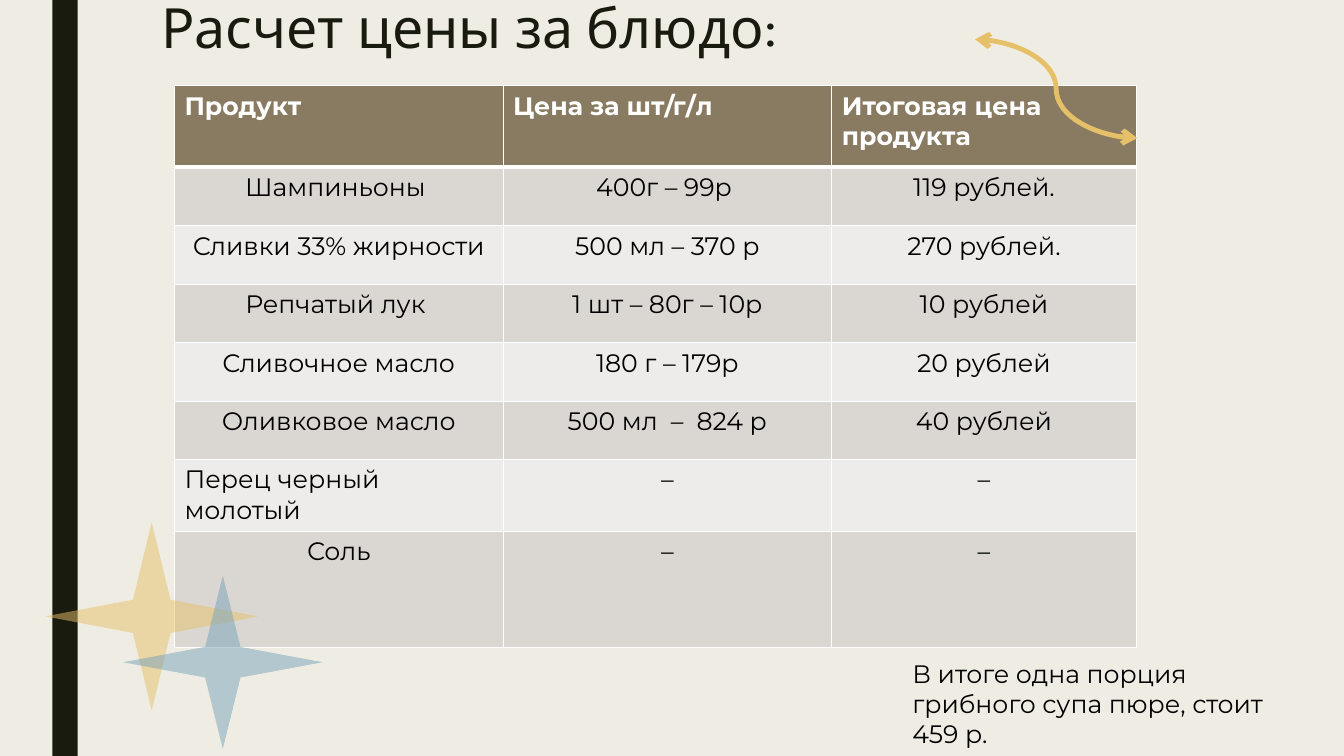
from dataclasses import dataclass

import lxml.etree
import pptx
import pptx.dml.color
import pptx.enum.shapes
import pptx.enum.text
import pptx.oxml
import pptx.oxml.ns
import pptx.util

SCALE = 9144
HUES = {
    "back": "EFEDE3", "dark": "191B0E", "head": "897B61", "odd": "DAD7D2",
    "even": "EDECEA", "gold": "E6C069", "blue": "77A2BB",
    "white": "FFFFFF", "black": "000000",
}
FORM = pptx.enum.shapes.MSO_SHAPE
ALIGN = pptx.enum.text.PP_ALIGN
qn = pptx.oxml.ns.qn


@dataclass(frozen=True)
class Box:
    left: int
    top: int
    width: int
    height: int


@dataclass(frozen=True)
class Figure:
    form: FORM
    box: Box
    hue: str
    alpha: int = 100


FIGURES = [
    Figure(FORM.STAR_4_POINT, Box(45, 518, 211, 187), "gold", 50),
    Figure(FORM.STAR_4_POINT, Box(122, 571, 198, 172), "blue", 50),
]
BAR = Figure(FORM.RECTANGLE, Box(52, 0, 25, 750), "dark")
COLS = [326, 326, 302]
ROWS = [81, 58, 58, 58, 58, 58, 58, 115]
PRICES = [
    ("Продукт", "Цена за шт/г/л", "Итоговая цена продукта"),
    ("Шампиньоны ", "400г – 99р ", "119 рублей."),
    ("Сливки 33% жирности", "500 мл – 370 р", "270 рублей."),
    ("Репчатый лук ", "1 шт – 80г – 10р", "10 рублей"),
    ("Сливочное масло", "180 г – 179р", "20 рублей"),
    ("Оливковое масло", "500 мл  –  824 р", "40 рублей"),
    ("Перец черный молотый", "–", "–"),
    ("Соль", "–", "–"),
]
LEFT = {(0, 0), (0, 1), (0, 2), (6, 0)}


def px(size: int) -> pptx.util.Emu:
    return pptx.util.Emu(size * SCALE)


def area(box: Box) -> tuple:
    return px(box.left), px(box.top), px(box.width), px(box.height)


def rgb(hue: str) -> pptx.dml.color.RGBColor:
    return pptx.dml.color.RGBColor.from_string(HUES[hue])


def paint(fill, hue: str) -> None:
    fill.solid()
    fill.fore_color.rgb = rgb(hue)


def style(para, face: str, size: float, hue: str, bold: bool = False,
          align=ALIGN.LEFT) -> None:
    para.alignment = align
    font = para.font
    font.name, font.size, font.bold = face, pptx.util.Pt(size), bold
    font.color.rgb = rgb(hue)


def draw(slide, item: Figure) -> None:
    shape = slide.shapes.add_shape(item.form, *area(item.box))
    shape.shadow.inherit = False
    shape.line.fill.background()
    paint(shape.fill, item.hue)
    if item.alpha < 100:
        tint = shape.fill._xPr.find(".//" + qn("a:srgbClr"))
        lxml.etree.SubElement(tint, qn("a:alpha"), val=str(item.alpha * 1000))


def border(cell, side: str, points: int) -> None:
    edge = lxml.etree.SubElement(
        cell._tc.get_or_add_tcPr(), qn("a:" + side), w=str(points * 12700))
    fill = lxml.etree.SubElement(edge, qn("a:solidFill"))
    lxml.etree.SubElement(fill, qn("a:srgbClr"), val=HUES["white"])


def title(slide) -> None:
    shape = slide.shapes.title
    shape.left, shape.top, shape.width, shape.height = area(Box(150, 0, 1050, 56))
    frame = shape.text_frame
    frame.text = "Расчет цены за блюдо:"
    frame.auto_size = pptx.enum.text.MSO_AUTO_SIZE.NONE
    frame.vertical_anchor = pptx.enum.text.MSO_ANCHOR.TOP
    frame.margin_top = px(1)
    para = frame.paragraphs[0]
    para.line_spacing = 0.89
    style(para, "Karla", 39.6, "dark")


def table(slide) -> None:
    box = Box(173, 85, sum(COLS), sum(ROWS))
    grid = slide.shapes.add_table(len(ROWS), len(COLS), *area(box)).table
    for col, width in zip(grid.columns, COLS):
        col.width = px(width)
    for r, (height, words) in enumerate(zip(ROWS, PRICES)):
        grid.rows[r].height = px(height)
        head = r == 0
        for c, word in enumerate(words):
            cell = grid.cell(r, c)
            cell.text = word
            align = ALIGN.LEFT if (r, c) in LEFT else ALIGN.CENTER
            style(cell.text_frame.paragraphs[0], "Montserrat", 18,
                  "white" if head else "black", head, align)
            for side in ("lnL", "lnR", "lnT", "lnB"):
                thick = (r, side) in ((0, "lnB"), (1, "lnT"))
                border(cell, side, 3 if thick else 1)
            paint(cell.fill, "head" if head else "odd" if r % 2 else "even")


def curve(slide) -> None:
    line = slide.shapes.add_connector(
        pptx.enum.shapes.MSO_CONNECTOR.CURVE, px(967), px(39), px(1128), px(137))
    line.line.color.rgb = rgb("gold")
    line.line.width = pptx.util.Pt(3.5)
    edge = line.line._get_or_add_ln()
    for end in ("a:headEnd", "a:tailEnd"):
        lxml.etree.SubElement(edge, qn(end), type="arrow")
    lxml.etree.SubElement(line._element.spPr, qn("a:effectLst"))


def total(slide) -> None:
    frame = slide.shapes.add_textbox(*area(Box(895, 648, 405, 101))).text_frame
    frame.word_wrap = True
    frame.auto_size = pptx.enum.text.MSO_AUTO_SIZE.SHAPE_TO_FIT_TEXT
    frame.text = "В итоге одна порция грибного супа пюре, стоит 459 р."
    style(frame.paragraphs[0], "Montserrat", 18, "black")


def main() -> None:
    deck = pptx.Presentation()
    deck.slide_width, deck.slide_height = px(1333), px(750)
    slide = deck.slides.add_slide(deck.slide_layouts.get_by_name("Title Only"))
    paint(slide.background.fill, "back")
    draw(slide, BAR)
    title(slide)
    table(slide)
    curve(slide)
    for item in FIGURES:
        draw(slide, item)
    total(slide)
    deck.save("out.pptx")


if __name__ == "__main__":
    main()
